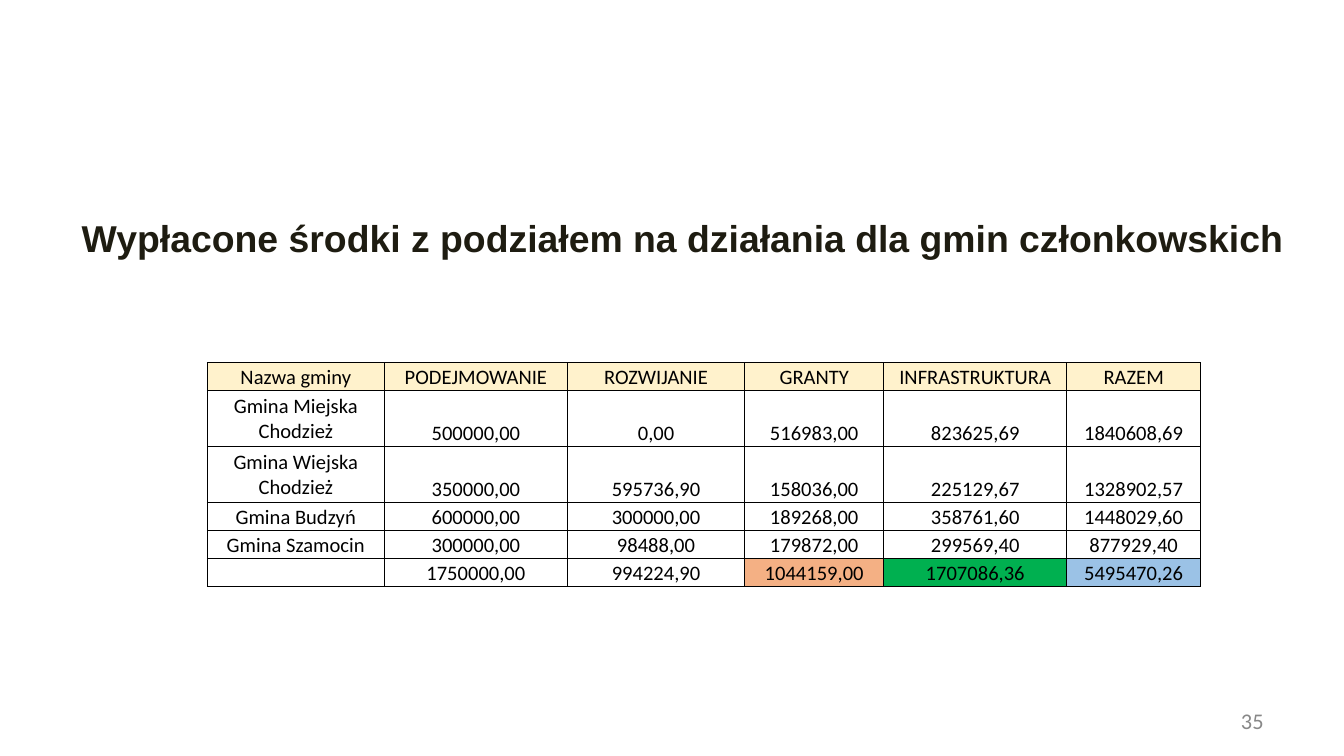
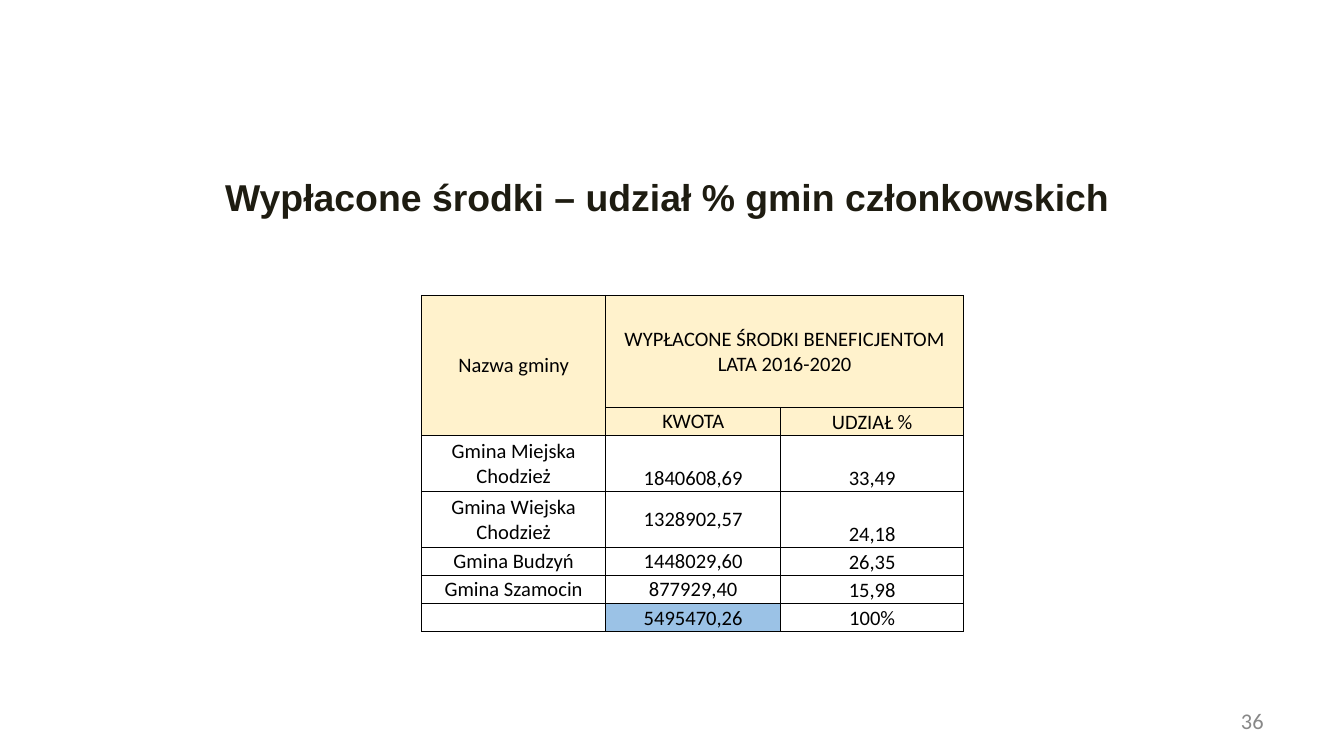
"""Builds two slides of tables on the funds paid out to member communes."""

from dataclasses import dataclass, field

from lxml.etree import SubElement
from pptx import Presentation
from pptx.dml.color import RGBColor
from pptx.enum.text import MSO_ANCHOR as Anchor, PP_ALIGN as Align
from pptx.oxml.ns import qn
from pptx.slide import Slide
from pptx.table import _Cell as Cell
from pptx.util import Pt

Position = tuple[int, int]


@dataclass(frozen=True)
class Theme:
    ink: str = "000000"
    title: str = "1E1C11"
    muted: str = "888888"
    header: str = "FFF2CC"
    orange: str = "F4B084"
    green: str = "00B050"
    blue: str = "9BC2E6"
    title_font: str = "Arial"
    body_font: str = "Calibri"
    title_size: float = 20
    number_size: float = 12
    cell_size: float = 11
    border: float = 0.5
    cell_inset: float = 0.7


@dataclass(frozen=True)
class Box:
    left: float
    top: float
    width: float
    height: float


@dataclass(frozen=True)
class TableLayout:
    left: float
    top: float
    columns: list[float]
    row_heights: list[float]
    rows: list[list[str]]
    header_rows: int = 1
    fills: dict[Position, str] = field(default_factory=dict)
    middle: set[Position] = field(default_factory=set)
    merges: list[tuple[Position, Position]] = field(default_factory=list)


@dataclass(frozen=True)
class Page:
    number: int
    title: str
    title_box: Box
    table: TableLayout


THEME = Theme()
NUMBER_BOX = Box(516, 375, 168, 21.6)
LINE = 15
COMMUNES = ["Gmina Miejska Chodzież", "Gmina Wiejska Chodzież", "Gmina Budzyń", "Gmina Szamocin", ""]
COMMUNE_HEIGHTS = [2 * LINE, 2 * LINE, LINE, LINE, LINE]
TOTALS = ["1840608,69", "1328902,57", "1448029,60", "877929,40", "5495470,26"]
SHARES = ["33,49", "24,18", "26,35", "15,98", "100%"]
MEASURES = [
    ["500000,00", "0,00", "516983,00", "823625,69"],
    ["350000,00", "595736,90", "158036,00", "225129,67"],
    ["600000,00", "300000,00", "189268,00", "358761,60"],
    ["300000,00", "98488,00", "179872,00", "299569,40"],
    ["1750000,00", "994224,90", "1044159,00", "1707086,36"],
]

PAGES = [
    Page(
        35,
        "Wypłacone środki z podziałem na działania dla gmin członkowskich",
        Box(36.7, 111.6, 667.5, 31.5),
        TableLayout(
            111, 194.2, [95, 98, 95, 74.5, 98, 71.8], [LINE, *COMMUNE_HEIGHTS],
            [
                ["Nazwa gminy", "PODEJMOWANIE", "ROZWIJANIE", "GRANTY", "INFRASTRUKTURA", "RAZEM"],
                *([name, *values, total] for name, values, total in zip(COMMUNES, MEASURES, TOTALS)),
            ],
            fills={(5, 3): THEME.orange, (5, 4): THEME.green, (5, 5): THEME.blue},
        ),
    ),
    Page(
        36,
        "Wypłacone środki – udział % gmin członkowskich",
        Box(113.5, 89.5, 494, 31.5),
        TableLayout(
            225.9, 158.2, [98.6, 93.8, 98], [4 * LINE, LINE, *COMMUNE_HEIGHTS],
            [
                ["Nazwa gminy", "WYPŁACONE ŚRODKI BENEFICJENTOM LATA 2016-2020", ""],
                ["", "KWOTA", "UDZIAŁ %"],
                *map(list, zip(COMMUNES, TOTALS, SHARES)),
            ],
            header_rows=2,
            fills={(6, 1): THEME.blue},
            middle={(row, 1) for row in (0, 1, 3, 4, 5)},
            merges=[((0, 0), (1, 0)), ((0, 1), (0, 2))],
        ),
    ),
]


def add_text(slide: Slide, box: Box, text: str, font: str, size: float, color: str,
             bold: bool = False, align: Align = Align.LEFT, anchor: Anchor = Anchor.TOP) -> None:
    shape = slide.shapes.add_textbox(Pt(box.left), Pt(box.top), Pt(box.width), Pt(box.height))
    frame = shape.text_frame
    frame.word_wrap = True
    frame.vertical_anchor = anchor
    paragraph = frame.paragraphs[0]
    paragraph.text = text
    paragraph.alignment = align
    paragraph.font.name = font
    paragraph.font.size = Pt(size)
    paragraph.font.bold = bold
    paragraph.font.color.rgb = RGBColor.from_string(color)


def add_borders(cell: Cell) -> None:
    properties = cell._tc.get_or_add_tcPr()
    for side in ("a:lnL", "a:lnR", "a:lnT", "a:lnB"):
        line = SubElement(properties, qn(side), w=str(Pt(THEME.border)))
        SubElement(SubElement(line, qn("a:solidFill")), qn("a:srgbClr"), val=THEME.ink)


def style_cell(cell: Cell, text: str, fill: str | None, anchor: Anchor) -> None:
    cell.margin_left = cell.margin_right = cell.margin_top = Pt(THEME.cell_inset)
    cell.margin_bottom = Pt(0)
    cell.vertical_anchor = anchor
    add_borders(cell)
    if fill:
        cell.fill.solid()
        cell.fill.fore_color.rgb = RGBColor.from_string(fill)
    else:
        cell.fill.background()
    paragraph = cell.text_frame.paragraphs[0]
    paragraph.alignment = Align.CENTER
    paragraph.font.name = THEME.body_font
    paragraph.font.size = Pt(THEME.cell_size)
    paragraph.font.color.rgb = RGBColor.from_string(THEME.ink)
    if text:
        paragraph.add_run().text = text
    else:
        SubElement(paragraph._p, qn("a:endParaRPr"), sz=str(int(THEME.cell_size * 100)))


def add_table(slide: Slide, layout: TableLayout) -> None:
    table = slide.shapes.add_table(
        len(layout.row_heights), len(layout.columns), Pt(layout.left), Pt(layout.top),
        Pt(sum(layout.columns)), Pt(sum(layout.row_heights)),
    ).table
    table.first_row = table.horz_banding = False
    for column, width in zip(table.columns, layout.columns):
        column.width = Pt(width)
    for row, height in zip(table.rows, layout.row_heights):
        row.height = Pt(height)
    for row_index, texts in enumerate(layout.rows):
        for column_index, text in enumerate(texts):
            position = (row_index, column_index)
            header = THEME.header if row_index < layout.header_rows else None
            centred = column_index == 0 or position in layout.middle
            style_cell(table.cell(*position), text, layout.fills.get(position, header),
                       Anchor.MIDDLE if centred else Anchor.BOTTOM)
    for first, last in layout.merges:
        table.cell(*first).merge(table.cell(*last))


def add_page(presentation: Presentation, page: Page) -> None:
    slide = presentation.slides.add_slide(presentation.slide_layouts[6])
    add_text(slide, NUMBER_BOX, str(page.number), THEME.body_font, THEME.number_size, THEME.muted,
             align=Align.RIGHT, anchor=Anchor.MIDDLE)
    add_table(slide, page.table)
    add_text(slide, page.title_box, page.title, THEME.title_font, THEME.title_size, THEME.title, bold=True)


def main() -> None:
    presentation = Presentation()
    presentation.slide_width = Pt(720)
    presentation.slide_height = Pt(405)
    for page in PAGES:
        add_page(presentation, page)
    presentation.save("out.pptx")


if __name__ == "__main__":
    main()
